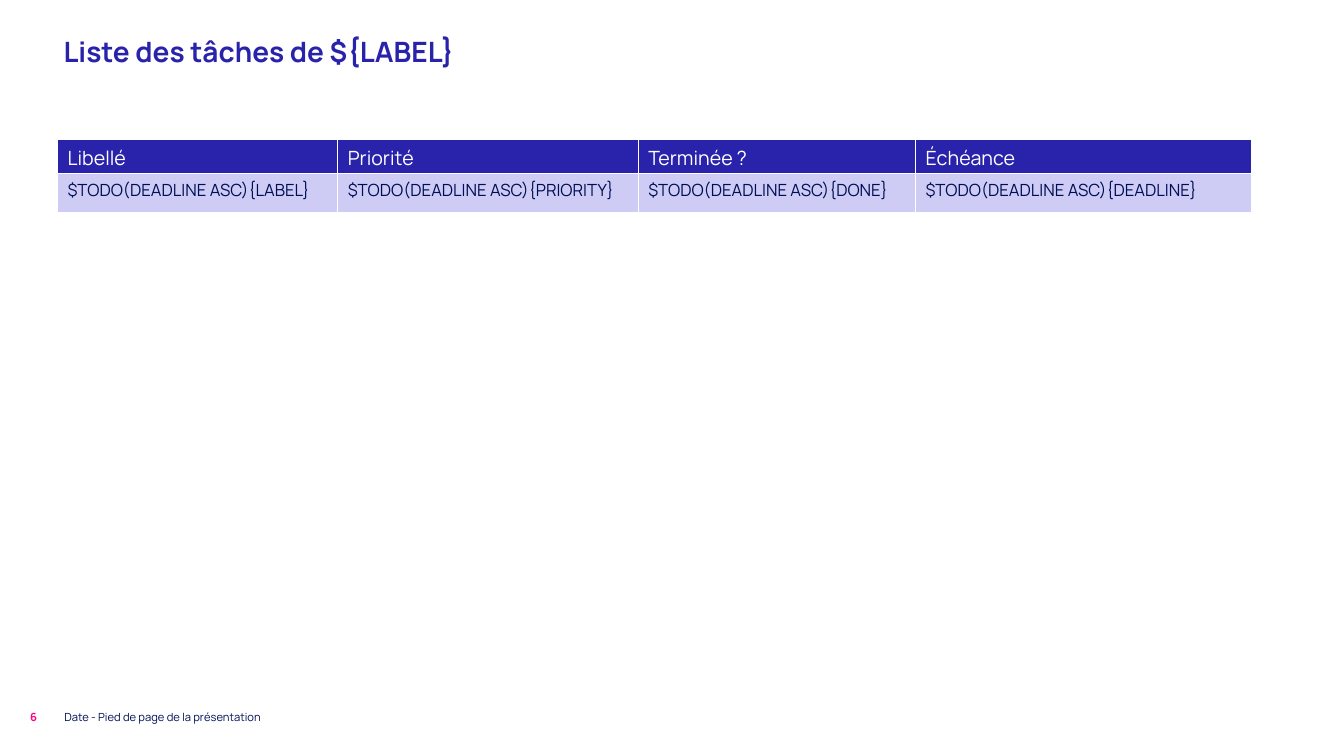
from lxml import etree
from pptx import Presentation
from pptx.dml.color import RGBColor
from pptx.enum.text import MSO_ANCHOR, PP_ALIGN
from pptx.oxml.ns import qn
from pptx.util import Inches, Pt

FONT = "Manrope"
COLORS = {
    "indigo": "2823AA",
    "navy": "000F55",
    "pink": "FF0087",
    "lavender": "CECCF5",
    "white": "FFFFFF",
}
COLUMNS = [
    ("Libellé", "LABEL", 2.78),
    ("Priorité", "PRIORITY", 2.98),
    ("Terminée ?", "DONE", 2.75),
    ("Échéance", "DEADLINE", 3.33),
]
ROW_HEIGHTS = [0.34, 0.39]


def rgb(name):
    return RGBColor.from_string(COLORS[name])


def write(tf, text, size, color, bold=False):
    tf.text = text
    p = tf.paragraphs[0]
    p.alignment = PP_ALIGN.LEFT
    p.font.name = FONT
    p.font.size = Pt(size)
    p.font.bold = bold
    p.font.color.rgb = rgb(color)


def add_title(s, text):
    title = s.shapes.title
    title.left, title.top = Inches(0.53), Inches(0.29)
    title.width, title.height = Inches(12.2), Inches(0.92)
    title.text_frame.vertical_anchor = MSO_ANCHOR.TOP
    write(title.text_frame, text, 20, "indigo", bold=True)


def add_footer_text(s, left, width, text, color, bold=False):
    box = s.shapes.add_textbox(Inches(left), Inches(6.97), Inches(width), Inches(0.28))
    tf = box.text_frame
    tf.word_wrap = True
    tf.vertical_anchor = MSO_ANCHOR.MIDDLE
    write(tf, text, 8, color, bold)


def set_borders(cell, color, width):
    tc_pr = cell._tc.get_or_add_tcPr()
    for i, side in enumerate(("lnL", "lnR", "lnT", "lnB")):
        line = etree.Element(qn(f"a:{side}"), w=str(Pt(width)))
        fill = etree.SubElement(line, qn("a:solidFill"))
        etree.SubElement(fill, qn("a:srgbClr"), val=COLORS[color])
        tc_pr.insert(i, line)


def fill_cell(cell, text, size, color, fill):
    write(cell.text_frame, text, size, color)
    cell.fill.solid()
    cell.fill.fore_color.rgb = rgb(fill)
    set_borders(cell, "white", 1)


def add_task_table(s):
    width = sum(col[2] for col in COLUMNS)
    frame = s.shapes.add_table(
        len(ROW_HEIGHTS), len(COLUMNS),
        Inches(0.57), Inches(1.38), Inches(width), Inches(sum(ROW_HEIGHTS)),
    )
    table = frame.table
    for row, height in zip(table.rows, ROW_HEIGHTS):
        row.height = Inches(height)
    for c, (heading, field, col_width) in enumerate(COLUMNS):
        table.columns[c].width = Inches(col_width)
        fill_cell(table.cell(0, c), heading, 14, "white", "indigo")
        fill_cell(table.cell(1, c), f"$TODO(DEADLINE ASC){{{field}}}", 12, "navy", "lavender")


def main():
    prs = Presentation()
    prs.slide_width, prs.slide_height = Inches(13.33), Inches(7.5)
    s = prs.slides.add_slide(prs.slide_layouts[5])
    add_footer_text(s, 0.54, 4.33, "Date - Pied de page de la présentation", "navy")
    add_footer_text(s, 0.2, 0.59, "6", "pink", bold=True)
    add_title(s, "Liste des tâches de ${LABEL}")
    add_task_table(s)
    prs.save("out.pptx")


if __name__ == "__main__":
    main()
